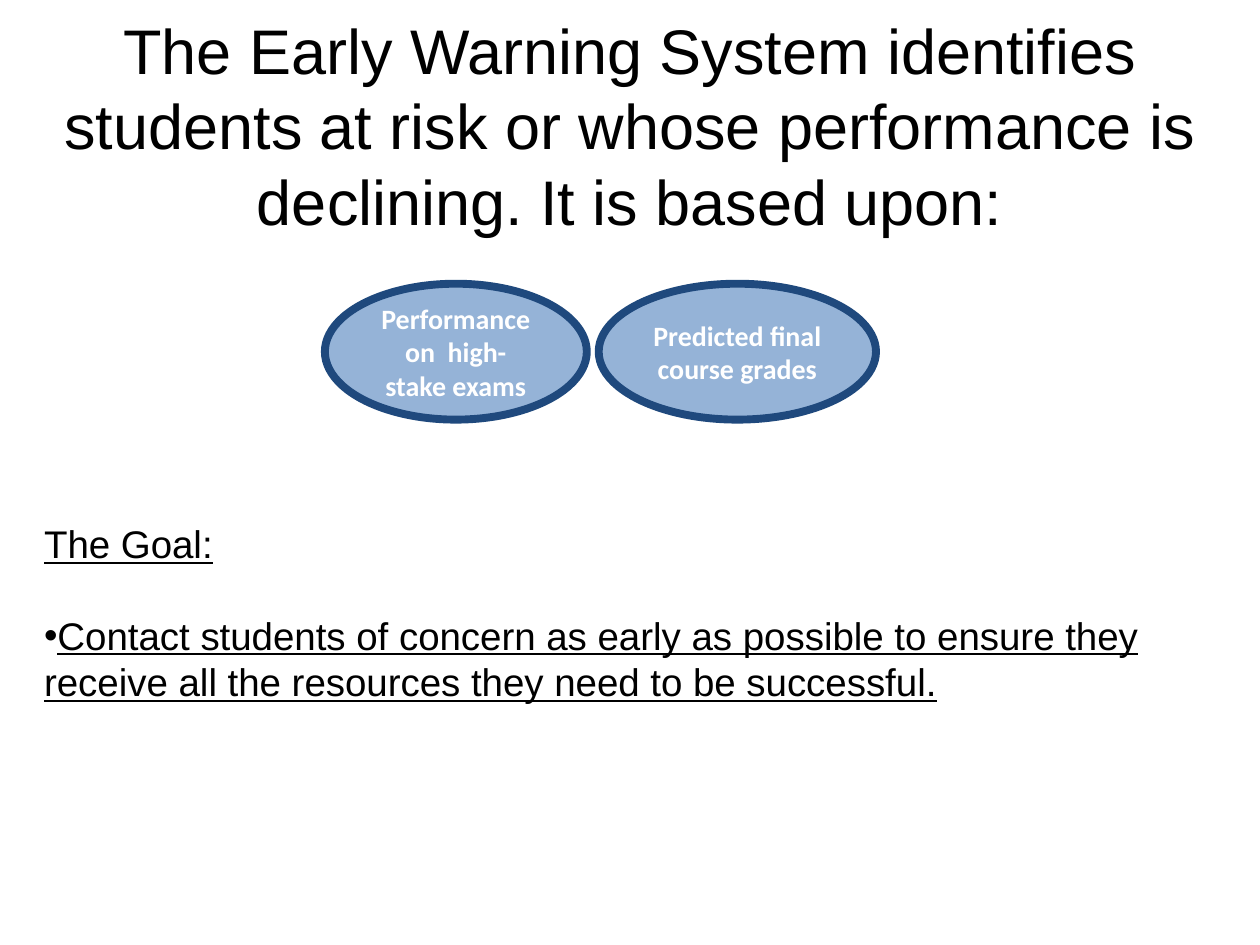
from pptx import Presentation
from pptx import util as u
from pptx.dml import color
from pptx.enum import shapes, text
from lxml import etree


def rgb(value):
    return color.RGBColor.from_string(value)


def add_run(paragraph, words, size, font, hex_color, bold=False, underline=False):
    run = paragraph.add_run()
    run.text = words
    run.font.size = u.Pt(size)
    run.font.name = font
    run.font.color.rgb = rgb(hex_color)
    run.font.bold = bold
    run.font.underline = underline


presentation = Presentation()
presentation.slide_width = u.Cm(25.4)
presentation.slide_height = u.Cm(19.05)
slide = presentation.slides.add_slide(presentation.slide_layouts[6])

# Heading
heading = slide.shapes.add_textbox(u.Cm(0), u.Cm(0.1), u.Cm(25.4), u.Cm(4.88))
heading.text_frame.word_wrap = True
paragraph = heading.text_frame.paragraphs[0]
paragraph.alignment = text.PP_ALIGN.CENTER
add_run(paragraph, "The Early Warning System identifies students at risk or whose "
        "performance is declining. It is based upon:", 36, "Arial", "000000")

# Ellipses naming the two criteria
criteria = [
    (12.07, 5.59, "Predicted final course grades"),
    (6.55, 5.28, "Performance on  high-stake exams"),
]
for left, width, words in criteria:
    ellipse = slide.shapes.add_shape(
        shapes.MSO_SHAPE.OVAL, u.Cm(left), u.Cm(5.72), u.Cm(width), u.Cm(2.74))
    ellipse.shadow.inherit = False
    ellipse.fill.solid()
    ellipse.fill.fore_color.rgb = rgb("95B3D7")
    ellipse.line.color.rgb = rgb("1F497D")
    ellipse.line.width = u.Pt(4.5)
    ellipse.text_frame.word_wrap = True
    ellipse.text_frame.vertical_anchor = text.MSO_ANCHOR.MIDDLE
    paragraph = ellipse.text_frame.paragraphs[0]
    paragraph.alignment = text.PP_ALIGN.CENTER
    add_run(paragraph, words, 16, "Calibri", "FFFFFF", bold=True)

# Goal, with space above its bulleted line
goal = slide.shapes.add_textbox(u.Cm(0.64), u.Cm(10.36), u.Cm(25.2), u.Cm(4.01))
goal.text_frame.word_wrap = True
goal_lines = [
    ("The Goal:", False),
    ("Contact students of concern as early as possible to ensure they", True),
    ("receive all the resources they need to be successful.", False),
]
for index, (words, bulleted) in enumerate(goal_lines):
    paragraph = goal.text_frame.paragraphs[0] if index == 0 else goal.text_frame.add_paragraph()
    add_run(paragraph, words, 22, "Arial", "000000", underline=True)
    if bulleted:
        paragraph.space_before = u.Pt(26)
        properties = paragraph._p.get_or_add_pPr()
        namespace = properties.nsmap["a"]
        etree.SubElement(properties, f"{{{namespace}}}buFont", typeface="Arial")
        etree.SubElement(properties, f"{{{namespace}}}buChar", char="•")

presentation.save("out.pptx")
